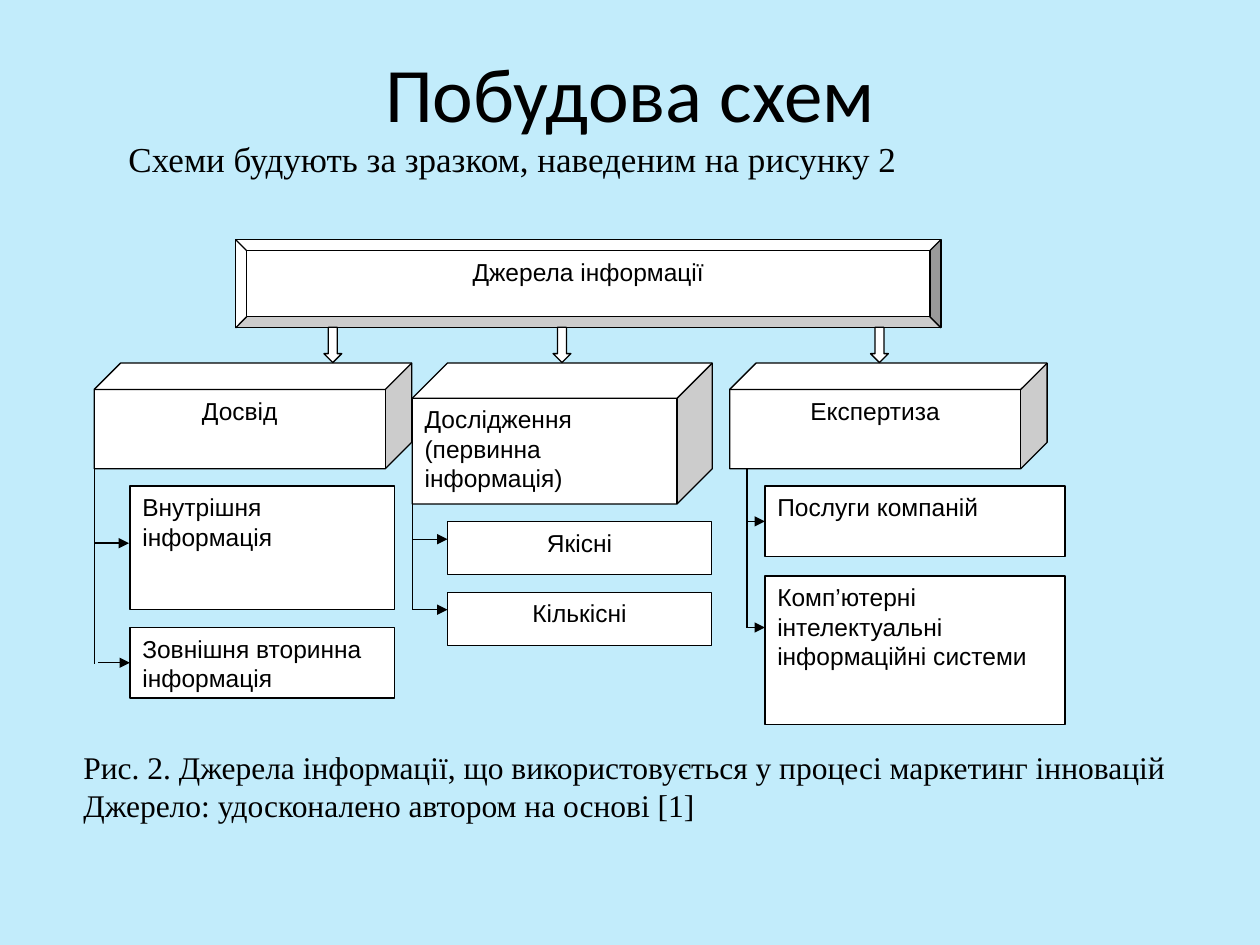
"""Build the slide with the scheme of information sources."""
import pptx
import pptx.dml.color
import pptx.enum.shapes
import pptx.enum.text
import pptx.oxml.ns
import pptx.util
from lxml import etree

Cm = pptx.util.Cm
MSO = pptx.enum.shapes.MSO_SHAPE
ALIGN = pptx.enum.text.PP_ALIGN
ANCHOR = pptx.enum.text.MSO_ANCHOR
qn = pptx.oxml.ns.qn
BACKGROUND = pptx.dml.color.RGBColor(0xC2, 0xEC, 0xFB)
WHITE = pptx.dml.color.RGBColor(0xFF, 0xFF, 0xFF)
BLACK = pptx.dml.color.RGBColor(0x00, 0x00, 0x00)


def write(tf, text, font="Arial", size=14, align=ALIGN.LEFT, anchor=ANCHOR.TOP, indent=0):
    tf.word_wrap = True
    tf.vertical_anchor = anchor
    for i, line in enumerate(text.split("\n")):
        p = tf.add_paragraph() if i else tf.paragraphs[0]
        p.alignment = align
        if indent:
            p._p.get_or_add_pPr().set("indent", str(Cm(indent)))
        r = p.add_run()
        r.text = line
        r.font.name = font
        r.font.size = pptx.util.Pt(size)
        r.font.color.rgb = BLACK


class Scheme:
    line_width = pptx.util.Pt(0.75)

    def __init__(self, prs):
        self.s = prs.slides.add_slide(prs.slide_layouts[5])
        self.s.background.fill.solid()
        self.s.background.fill.fore_color.rgb = BACKGROUND
        self.group = None

    def start_group(self):
        self.group = self.s.shapes.add_group_shape()

    def title(self, text, left, top, width, height):
        sp = self.s.shapes.title
        sp.left, sp.top, sp.width, sp.height = map(Cm, (left, top, width, height))
        write(sp.text_frame, text, font="Calibri", size=44, align=ALIGN.CENTER,
              anchor=ANCHOR.MIDDLE)

    def note(self, text, left, top, width, height, size, indent):
        sp = self.s.shapes.add_textbox(*map(Cm, (left, top, width, height)))
        write(sp.text_frame, text, font="Times New Roman", size=size, indent=indent)

    def shape(self, kind, left, top, width, height, text="", align=ALIGN.CENTER):
        sp = self.group.shapes.add_shape(kind, *map(Cm, (left, top, width, height)))
        sp.shadow.inherit = False
        sp.fill.solid()
        sp.fill.fore_color.rgb = WHITE
        sp.line.color.rgb = BLACK
        sp.line.width = self.line_width
        if text:
            write(sp.text_frame, text, align=align)
        return sp

    def line(self, x1, y1, x2, y2, arrow=False, target=None):
        cxn = self.group.shapes.add_connector(
            pptx.enum.shapes.MSO_CONNECTOR.STRAIGHT, *map(Cm, (x1, y1, x2, y2)))
        cxn.line.color.rgb = BLACK
        cxn.line.width = self.line_width
        if arrow:
            etree.SubElement(cxn.line._get_or_add_ln(), qn("a:tailEnd"), type="triangle")
        etree.SubElement(cxn._element.spPr, qn("a:effectLst"))
        if target is not None:
            cxn.end_connect(target, 1)


def main():
    prs = pptx.Presentation()
    prs.slide_width, prs.slide_height = Cm(25.4), Cm(19.05)
    scheme = Scheme(prs)
    scheme.title("Побудова схем", 1.27, 0.76, 22.86, 2.16)

    scheme.start_group()
    scheme.shape(MSO.BEVEL, 4.75, 4.83, 14.22, 1.78, "Джерела інформації")
    for left, width, height, text, align in (
        (1.9, 6.4, 2.13, "Досвід", ALIGN.CENTER),
        (8.31, 6.05, 2.84, "Дослідження (первинна інформація)", ALIGN.LEFT),
        (14.71, 6.4, 2.13, "Експертиза", ALIGN.CENTER),
    ):
        scheme.shape(MSO.CUBE, left, 7.32, width, height, text, align)
    for left in (6.53, 11.15, 17.55):
        scheme.shape(MSO.DOWN_ARROW, left, 6.6, 0.36, 0.71)

    boxes = {}
    for left, top, width, height, text, align in (
        (9.02, 10.52, 5.33, 1.07, "Якісні", ALIGN.CENTER),
        (9.02, 11.94, 5.33, 1.07, "Кількісні", ALIGN.CENTER),
        (15.42, 9.8, 6.05, 1.42, "Послуги компаній", ALIGN.JUSTIFY),
        (15.42, 11.61, 6.05, 3, "Комп’ютерні інтелектуальні інформаційні системи",
         ALIGN.JUSTIFY),
        (2.62, 9.8, 5.33, 2.49, "Внутрішня інформація", ALIGN.LEFT),
        (2.62, 12.65, 5.33, 1.42, "Зовнішня вторинна інформація", ALIGN.LEFT),
    ):
        boxes[text] = scheme.shape(MSO.RECTANGLE, left, top, width, height, text, align)

    for x, top, bottom in ((15.06, 9.45, 12.65), (8.31, 10.16, 12.29), (1.9, 9.45, 13.39)):
        scheme.line(x, top, x, bottom)
    for x1, x2, y, target in (
        (15.06, 15.42, 12.65, None),
        (15.06, 15.42, 10.51, "Послуги компаній"),
        (8.31, 9.02, 10.87, None),
        (8.31, 9.02, 12.29, None),
        (1.9, 2.6, 10.95, None),
        (1.98, 2.62, 13.36, "Зовнішня вторинна інформація"),
    ):
        scheme.line(x1, y, x2, y, arrow=True, target=boxes.get(target))

    scheme.note("Схеми будують за зразком, наведеним на рисунку 2",
                1.09, 2.64, 17.4, 1.96, size=20, indent=1.25)
    scheme.note("Рис. 2. Джерела інформації, що використовується у процесі маркетинг інновацій\n"
                "Джерело: удосконалено автором на основі [1]",
                0.48, 14.96, 24.43, 1.8, size=18, indent=0.95)
    prs.save("out.pptx")


if __name__ == "__main__":
    main()
